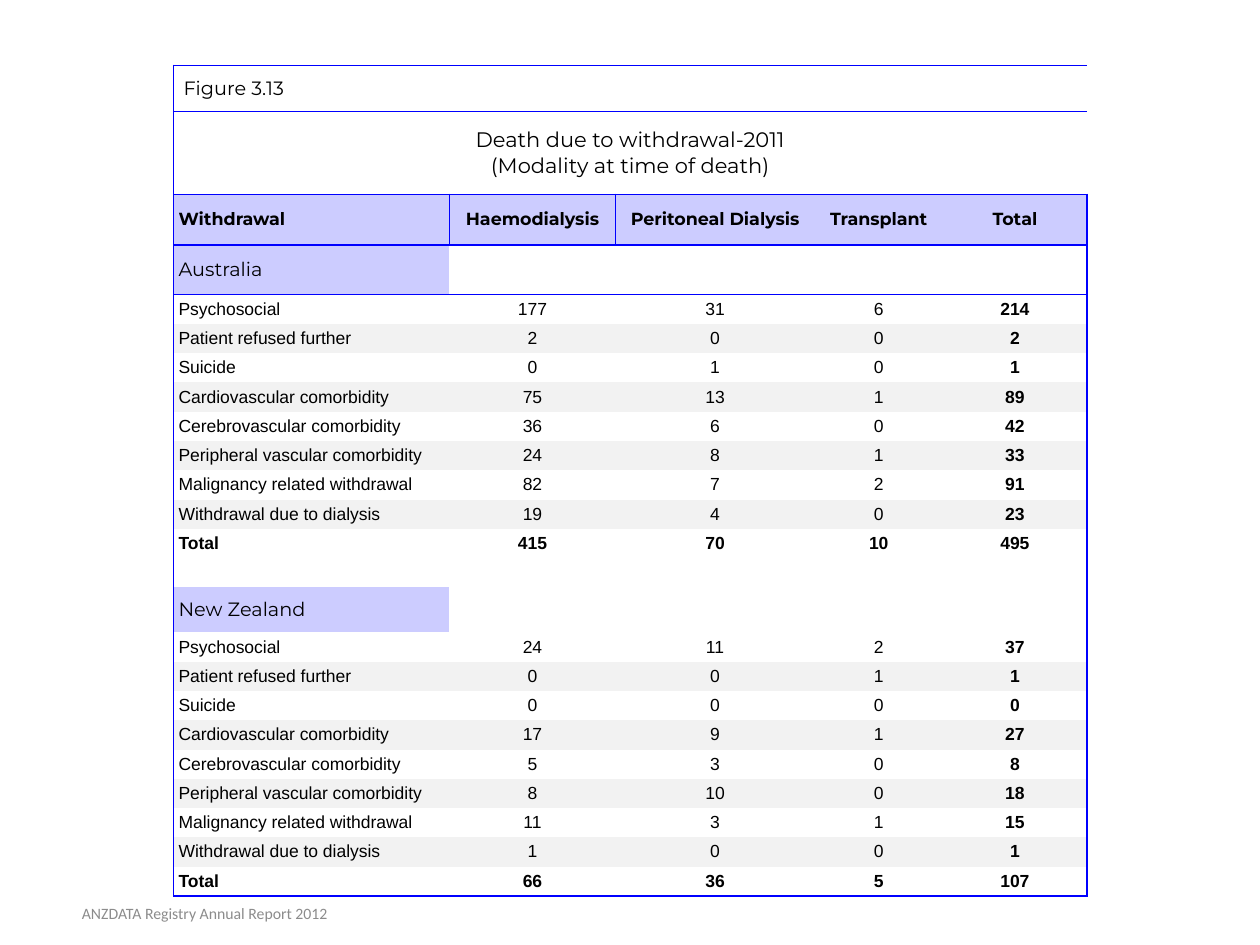
"""Builds a one-slide table of deaths due to withdrawal by modality."""
from dataclasses import dataclass

from lxml import etree
from pptx import Presentation
from pptx import util as u
from pptx.dml.color import RGBColor
from pptx.enum import text
from pptx.oxml.ns import qn

Cm, Pt = u.Cm, u.Pt


@dataclass(frozen=True)
class Theme:
    black: str = "000000"
    line: str = "0000FF"
    head: str = "CCCCFF"
    band: str = "F2F2F2"
    white: str = "FFFFFF"
    foot: str = "8C8C8C"
    display: str = "Montserrat"
    body: str = "Arial"
    footer: str = "Calibri"
    title_pt: int = 12
    label_pt: int = 11
    body_pt: int = 10
    foot_pt: int = 9


T = Theme()
NO_STYLE = "{2D5ABB26-0587-4C30-8999-92F81FD0307C}"
COLS = [5.56, 3.35, 4.01, 2.59, 2.9]
HEADER = ["Withdrawal", "Haemodialysis", "Peritoneal Dialysis", "Transplant", "Total"]
REASONS = [
    "Psychosocial", "Patient refused further", "Suicide",
    "Cardiovascular comorbidity", "Cerebrovascular comorbidity",
    "Peripheral vascular comorbidity", "Malignancy related withdrawal",
    "Withdrawal due to dialysis",
]
DEATHS = {
    "Australia": [(177, 31, 6), (2, 0, 0), (0, 1, 0), (75, 13, 1),
                  (36, 6, 0), (24, 8, 1), (82, 7, 2), (19, 4, 0)],
    "New Zealand": [(24, 11, 2), (0, 0, 1), (0, 0, 0), (17, 9, 1),
                    (5, 3, 0), (8, 10, 0), (11, 3, 1), (1, 0, 0)],
}
ROW = 0.59
HEIGHTS = [0.93, 1.67, 1.02, 1.0] + [ROW] * 10 + [0.91] + [ROW] * 9
GAP_ROW = 13


def set_format(obj, values):
    for name, value in values.items():
        setattr(obj, name, value)


def write(tf, lines, size, font, color=T.black, bold=False, center=False, after=None):
    for i, line in enumerate(lines):
        p = tf.add_paragraph() if i else tf.paragraphs[0]
        p.alignment = text.PP_ALIGN.CENTER if center else text.PP_ALIGN.LEFT
        if after is not None:
            p.space_after = Pt(after)
        r = p.add_run()
        r.text = line
        set_format(r.font, {"size": Pt(size), "name": font, "bold": bold})
        r.font.color.rgb = RGBColor.from_string(color)


def paint(cell, color):
    if color:
        cell.fill.solid()
        cell.fill.fore_color.rgb = RGBColor.from_string(color)
    else:
        cell.fill.background()


def set_borders(cell, sides):
    tcPr = cell._tc.get_or_add_tcPr()
    for i, side in enumerate(s for s in "LRTB" if s in sides):
        ln = etree.Element(qn(f"a:ln{side}"), w=str(Pt(1)))
        fill = etree.SubElement(ln, qn("a:solidFill"))
        etree.SubElement(fill, qn("a:srgbClr"), val=T.line)
        tcPr.insert(i, ln)


def fill_row(tbl, row, values, bold, fill=None, **style):
    for col, value in enumerate(values):
        cell = tbl.cell(row, col)
        paint(cell, fill)
        write(cell.text_frame, [str(value)], T.body_pt, center=col > 0, after=14,
              bold=bold or col == len(COLS) - 1, **style)


def fill_title(tbl, row, lines, size, center):
    cell = tbl.cell(row, 0)
    cell.merge(tbl.cell(row, len(COLS) - 1))
    write(cell.text_frame, lines, size, T.display, center=center)
    return cell


def fill_country(tbl, row, country, deaths):
    cell = tbl.cell(row, 0)
    paint(cell, T.head)
    write(cell.text_frame, [country], T.label_pt, T.display, after=14)
    for i, (reason, counts) in enumerate(zip(REASONS, deaths)):
        fill_row(tbl, row + 1 + i, [reason, *counts, sum(counts)], False,
                 T.band if i % 2 else T.white, font=T.body)
    totals = [sum(column) for column in zip(*deaths)]
    fill_row(tbl, row + 1 + len(REASONS), ["Total", *totals, sum(totals)], True, font=T.body)


def finish_cells(tbl):
    last_row, last_col = len(HEIGHTS) - 1, len(COLS) - 1
    for row in range(last_row + 1):
        for col in range(last_col + 1):
            cell = tbl.cell(row, col)
            sides = "L" * (col == 0) + "R" * (col == last_col)
            sides += "T" * (row <= 3) + "B" * (row <= 2 or row == last_row)
            if row == 2:
                sides += "R" * (col == 0) + "L" * (col == 1)
            set_borders(cell, sides)
            set_format(cell, {
                "vertical_anchor": text.MSO_ANCHOR.MIDDLE,
                "margin_left": Cm(0.2 if row == 0 else 0.1), "margin_right": Cm(0.1),
                "margin_top": Cm(0.05), "margin_bottom": Cm(0.05),
            })
            p = cell.text_frame.paragraphs[0]
            if not p.runs:
                etree.SubElement(p._p, qn("a:endParaRPr"), sz=str(T.body_pt * 100))


def add_deaths_table(s):
    frame = s.shapes.add_table(len(HEIGHTS), len(COLS), Cm(3.5), Cm(1.32),
                               Cm(sum(COLS)), Cm(sum(HEIGHTS)))
    tbl = frame.table
    set_format(tbl, {"first_row": False, "horz_banding": False})
    tbl._tbl.tblPr.find(qn("a:tableStyleId")).text = NO_STYLE
    for column, width in zip(tbl.columns, COLS):
        column.width = Cm(width)
    for row, height in zip(tbl.rows, HEIGHTS):
        row.height = Cm(height)
    fill_title(tbl, 0, ["Figure 3.13"], T.label_pt, False)
    fill_title(tbl, 1, ["Death due to withdrawal-2011", "(Modality at time of death)"],
               T.title_pt, True)
    fill_row(tbl, 2, HEADER, True, T.head, font=T.display)
    for row, (country, deaths) in zip((3, GAP_ROW + 1), DEATHS.items()):
        fill_country(tbl, row, country, deaths)
    finish_cells(tbl)


def add_footer(s):
    sp = s.shapes.add_textbox(Cm(0.1), Cm(17.91), Cm(8.05), Cm(1.02))
    tf = sp.text_frame
    set_format(tf, {"word_wrap": True, "vertical_anchor": text.MSO_ANCHOR.MIDDLE})
    write(tf, ["ANZDATA Registry Annual Report 2012"], T.foot_pt, T.footer, T.foot, center=True)


def main():
    prs = Presentation()
    set_format(prs, {"slide_width": Cm(25.4), "slide_height": Cm(19.05)})
    s = prs.slides.add_slide(prs.slide_layouts[6])
    add_deaths_table(s)
    add_footer(s)
    prs.save("out.pptx")


if __name__ == "__main__":
    main()
